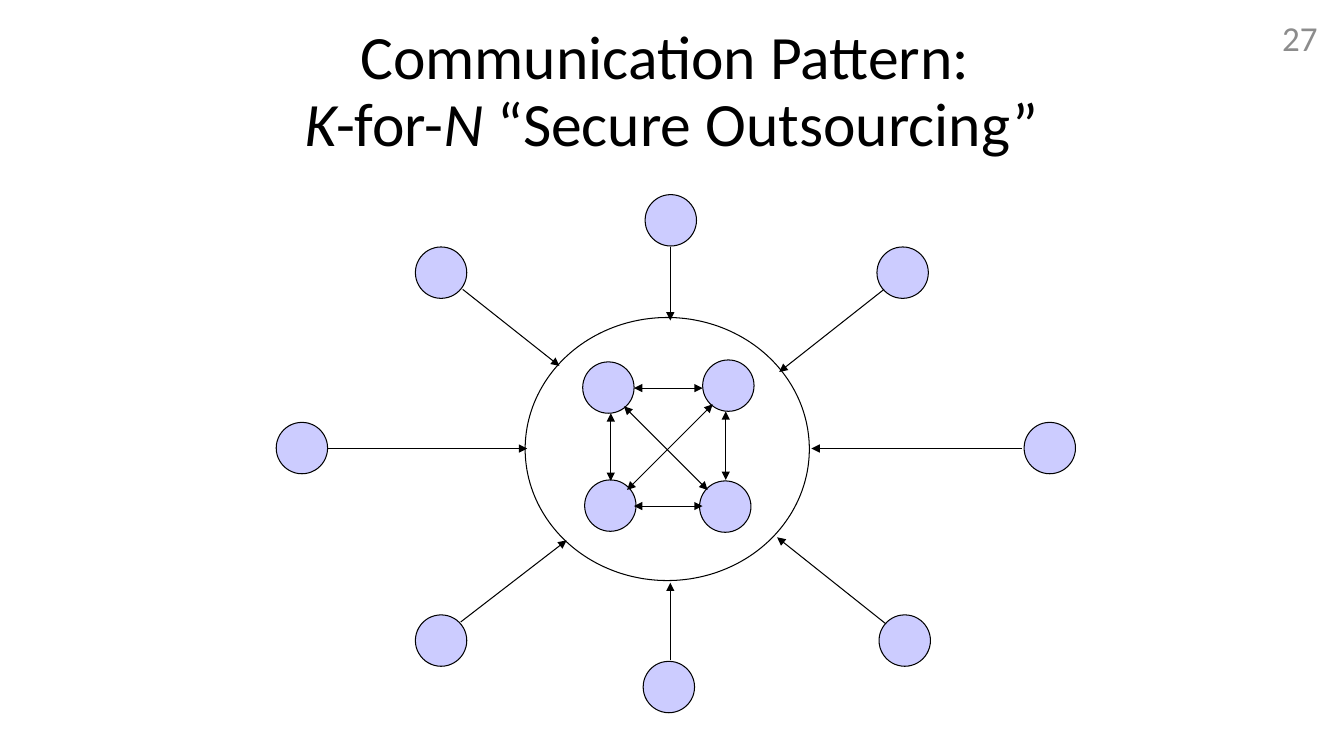
from pptx import Presentation
from pptx.dml.color import RGBColor
from pptx.enum import shapes, text
from pptx.oxml import ns
from pptx.util import Pt
from lxml import etree

COLOURS = {"ink": "000000", "node": "CCCCFF", "number": "8C8C8C"}
FONT = "Calibri"
NODE = 36.7
CLIENTS = [
    ((0, 162.7), (36.7, 181.4), (179.3, 181.4)),
    ((99.4, 37.4), (133.2, 67.7), (202.3, 122.4)),
    ((263.5, 0), (281.5, 37.4), (281.5, 90)),
    ((429.1, 37.4), (434.2, 67.7), (359.3, 126.7)),
    ((534.2, 162.7), (532.8, 181.4), (382.3, 181.4)),
    ((430.6, 300.2), (435.6, 306.7), (357.8, 244.8)),
    ((262.1, 333.4), (281.5, 332.6), (281.5, 277.2)),
    ((99.4, 300.2), (131.8, 305.3), (207.4, 247)),
]
SERVERS = [(41.1, 31.7), (126.8, 30.3), (42.5, 116), (124.6, 116.7)]
SERVER_LINKS = [
    ((77.8, 50.4), (126.8, 50.4)),
    ((77.8, 134.7), (126.8, 134.7)),
    ((61.2, 68.4), (61.2, 116.7)),
    ((143.3, 67), (143.3, 116)),
    ((72.8, 123.2), (134, 62)),
    ((70.6, 63.4), (130.4, 123.2)),
]


def colour(name):
    """Return the named colour."""
    return RGBColor.from_string(COLOURS[name])


def add_run(paragraph, words, size, ink, italic=False):
    """Append one formatted run."""
    run = paragraph.add_run()
    run.text = words
    run.font.name = FONT
    run.font.size = Pt(size)
    run.font.italic = italic
    run.font.color.rgb = colour(ink)


def place(shape, left, top, width, height):
    """Move and size a shape in points."""
    shape.left, shape.top = Pt(left), Pt(top)
    shape.width, shape.height = Pt(width), Pt(height)


def add_ellipse(slide, left, top, width, height, fill=None):
    """Draw an outlined ellipse, filled if a colour is named."""
    ellipse = slide.shapes.add_shape(
        shapes.MSO_SHAPE.OVAL, Pt(left), Pt(top), Pt(width), Pt(height))
    ellipse.shadow.inherit = False
    ellipse.line.color.rgb = colour("ink")
    ellipse.line.width = Pt(0.75)
    if fill:
        ellipse.fill.solid()
        ellipse.fill.fore_color.rgb = colour(fill)
    else:
        ellipse.fill.background()


def add_arrow(slide, left, top, start, end, ends=("tailEnd",)):
    """Draw an arrow between two points measured from a corner."""
    arrow = slide.shapes.add_connector(
        shapes.MSO_CONNECTOR.STRAIGHT,
        Pt(left + start[0]), Pt(top + start[1]),
        Pt(left + end[0]), Pt(top + end[1]))
    arrow.line.color.rgb = colour("ink")
    arrow.line.width = Pt(0.75)
    outline = arrow.line._get_or_add_ln()
    for tag in ends:
        etree.SubElement(outline, ns.qn("a:" + tag), type="triangle")
    etree.SubElement(arrow._element.spPr, ns.qn("a:effectLst"))


def add_title(slide, left, top, width, height):
    """Fill the title placeholder."""
    title = slide.shapes.title
    place(title, left, top, width, height)
    frame = title.text_frame
    frame.word_wrap = True
    frame.auto_size = text.MSO_AUTO_SIZE.NONE
    frame.vertical_anchor = text.MSO_ANCHOR.MIDDLE
    frame.margin_left = frame.margin_right = 0
    frame.margin_top = frame.margin_bottom = 0
    paragraph = frame.paragraphs[0]
    paragraph.alignment = text.PP_ALIGN.CENTER
    paragraph.line_spacing = 0.9
    add_run(paragraph, "Communication Pattern: ", 44, "ink")
    paragraph.add_line_break()
    for words, italic in [("K", True), ("-for-", False), ("N", True),
                          (" “Secure Outsourcing”", False)]:
        add_run(paragraph, words, 44, "ink", italic)


def add_clients(slide, left, top):
    """Draw the outer parties and their arrows to the servers."""
    for (x, y), start, end in CLIENTS:
        add_ellipse(slide, left + x, top + y, NODE, NODE, "node")
        add_arrow(slide, left, top, start, end)


def add_servers(slide, left, top, width, height):
    """Draw the ring of fully connected servers."""
    add_ellipse(slide, left, top, width, height)
    for x, y in SERVERS:
        add_ellipse(slide, left + x, top + y, NODE, NODE, "node")
    for start, end in SERVER_LINKS:
        add_arrow(slide, left, top, start, end, ("headEnd", "tailEnd"))


def add_number(slide, left, top, width, height):
    """Write the slide number."""
    box = slide.shapes.add_textbox(Pt(left), Pt(top), Pt(width), Pt(height))
    frame = box.text_frame
    frame.word_wrap = True
    frame.vertical_anchor = text.MSO_ANCHOR.MIDDLE
    paragraph = frame.paragraphs[0]
    paragraph.alignment = text.PP_ALIGN.RIGHT
    add_run(paragraph, "27", 25, "number")


def main():
    """Build and save the slide."""
    presentation = Presentation()
    presentation.slide_width, presentation.slide_height = Pt(960), Pt(540)
    slide = presentation.slides.add_slide(presentation.slide_layouts[5])
    add_title(slide, 120, 21.6, 720, 90)
    add_clients(slide, 197.3, 139)
    add_servers(slide, 375.1, 226.8, 203, 187.9)
    add_number(slide, 732.2, 12.2, 216, 28.8)
    presentation.save("out.pptx")


if __name__ == "__main__":
    main()
